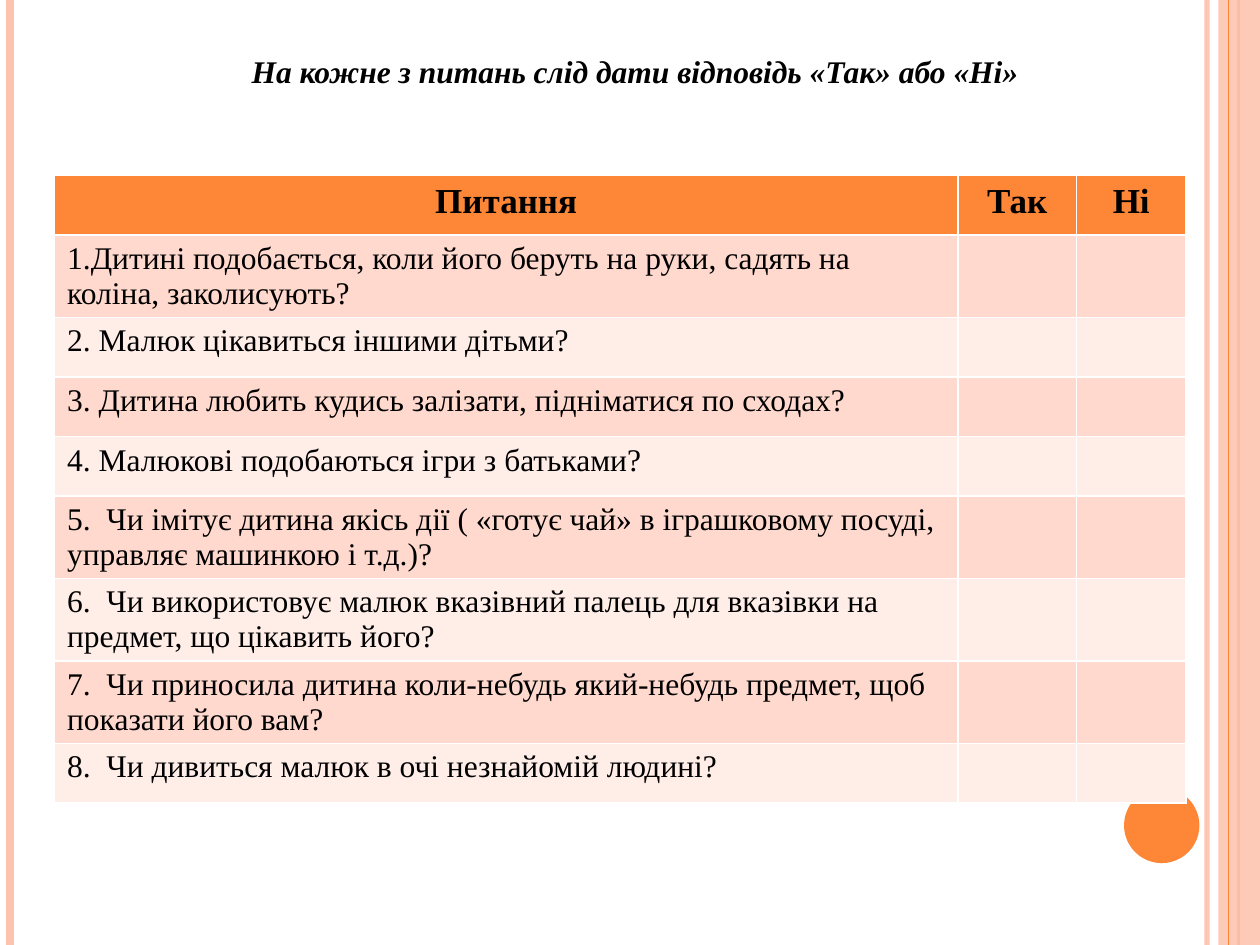
from lxml.etree import SubElement
from pptx import Presentation
from pptx.dml.color import RGBColor
from pptx.enum.shapes import MSO_CONNECTOR as Connector, MSO_SHAPE as Shape
from pptx.enum.text import MSO_ANCHOR as Anchor, PP_ALIGN as Align
from pptx.oxml.ns import qn
from pptx.util import Cm, Pt

FONT = "Times New Roman"
BLACK = "000000"
ORANGE = "FE8637"
PEACH = "FEC3AE"
BANDS = ["FFD9CE", "FFEDE8"]
SLIDE_WIDTH, SLIDE_HEIGHT = 25.4, 19.05
COLUMN_WIDTHS = [18.21, 2.39, 2.21]
ROW_HEIGHT, TALL_ROW_HEIGHT = 1.2, 1.66
TALL_QUESTIONS = {1, 5, 6, 7}

TITLE = "На кожне з питань слід дати відповідь «Так» або «Ні»"
HEADINGS = ["Питання", "Так", "Ні"]
QUESTIONS = [
    "1.Дитині подобається, коли його беруть на руки, садять на коліна, заколисують?",
    "2. Малюк цікавиться іншими дітьми?",
    "3. Дитина любить кудись залізати, підніматися по сходах?",
    "4. Малюкові подобаються ігри з батьками?",
    "5.  Чи імітує дитина якісь дії ( «готує чай» в іграшковому посуді, управляє машинкою і т.д.)?",
    "6.  Чи використовує малюк вказівний палець для вказівки на предмет, що цікавить його?",
    "7.  Чи приносила дитина коли-небудь який-небудь предмет, щоб показати його вам?",
    "8.  Чи дивиться малюк в очі незнайомій людині?",
]


def paint(fill, color, opacity=100):
    fill.solid()
    fill.fore_color.rgb = RGBColor.from_string(color)
    if opacity < 100:
        color_element = fill._xPr.find(qn("a:solidFill"))[0]
        SubElement(color_element, qn("a:alpha"), val=str(opacity * 1000))


def add_stripe(slide, x, color, width, opacity=100):
    stripe = slide.shapes.add_connector(
        Connector.STRAIGHT, Cm(x), Cm(0), Cm(x), Cm(SLIDE_HEIGHT))
    stripe.line.width = Pt(width)
    paint(stripe.line.fill, color, opacity)
    SubElement(stripe._element.spPr, qn("a:effectLst"))


def add_plain_shape(slide, kind, left, top, width, height, color, opacity=100):
    shape = slide.shapes.add_shape(kind, Cm(left), Cm(top), Cm(width), Cm(height))
    shape.shadow.inherit = False
    shape.line.fill.background()
    paint(shape.fill, color, opacity)


def format_paragraph(paragraph, size, bold=False, italic=False, align=Align.LEFT):
    paragraph.alignment = align
    font = paragraph.font
    font.name, font.size = FONT, Pt(size)
    font.bold, font.italic = bold, italic
    font.color.rgb = RGBColor.from_string(BLACK)


def set_title(slide):
    title = slide.shapes.title
    title.left, title.top, title.width, title.height = Cm(3.7), Cm(0.92), Cm(18.21), Cm(1.03)
    frame = title.text_frame
    frame.text = TITLE
    frame.word_wrap = True
    frame.vertical_anchor = Anchor.TOP
    format_paragraph(frame.paragraphs[0], 18, bold=True, italic=True, align=Align.CENTER)


def add_questionnaire(slide):
    heights = [ROW_HEIGHT] + [
        TALL_ROW_HEIGHT if number in TALL_QUESTIONS else ROW_HEIGHT
        for number in range(1, len(QUESTIONS) + 1)]
    table = slide.shapes.add_table(
        len(heights), len(HEADINGS), Cm(1.1), Cm(3.54),
        Cm(sum(COLUMN_WIDTHS)), Cm(sum(heights))).table
    for column, width in zip(table.columns, COLUMN_WIDTHS):
        column.width = Cm(width)
    for row, height in zip(table.rows, heights):
        row.height = Cm(height)
    for cell, heading in zip(table.rows[0].cells, HEADINGS):
        cell.text = heading
        paint(cell.fill, ORANGE)
        format_paragraph(cell.text_frame.paragraphs[0], 20, bold=True, align=Align.CENTER)
    for index, question in enumerate(QUESTIONS):
        cells = table.rows[index + 1].cells
        cells[0].text = question
        for cell in cells:
            paint(cell.fill, BANDS[index % 2])
            format_paragraph(cell.text_frame.paragraphs[0], 18)


def main():
    presentation = Presentation()
    presentation.slide_width, presentation.slide_height = Cm(SLIDE_WIDTH), Cm(SLIDE_HEIGHT)
    slide = presentation.slides.add_slide(presentation.slide_layouts[5])
    add_stripe(slide, 24.33, PEACH, 3, 93)
    add_stripe(slide, 0.2, PEACH, 4.5)
    add_stripe(slide, 24.97, ORANGE, 1.5)
    add_plain_shape(slide, Shape.RECTANGLE, 24.56, 0, 0.84, SLIDE_HEIGHT, PEACH, 87)
    add_stripe(slide, 24.77, ORANGE, 0.75)
    add_plain_shape(slide, Shape.OVAL, 22.66, 15.88, 1.52, 1.52, ORANGE)
    add_questionnaire(slide)
    set_title(slide)
    presentation.save("out.pptx")


if __name__ == "__main__":
    main()
